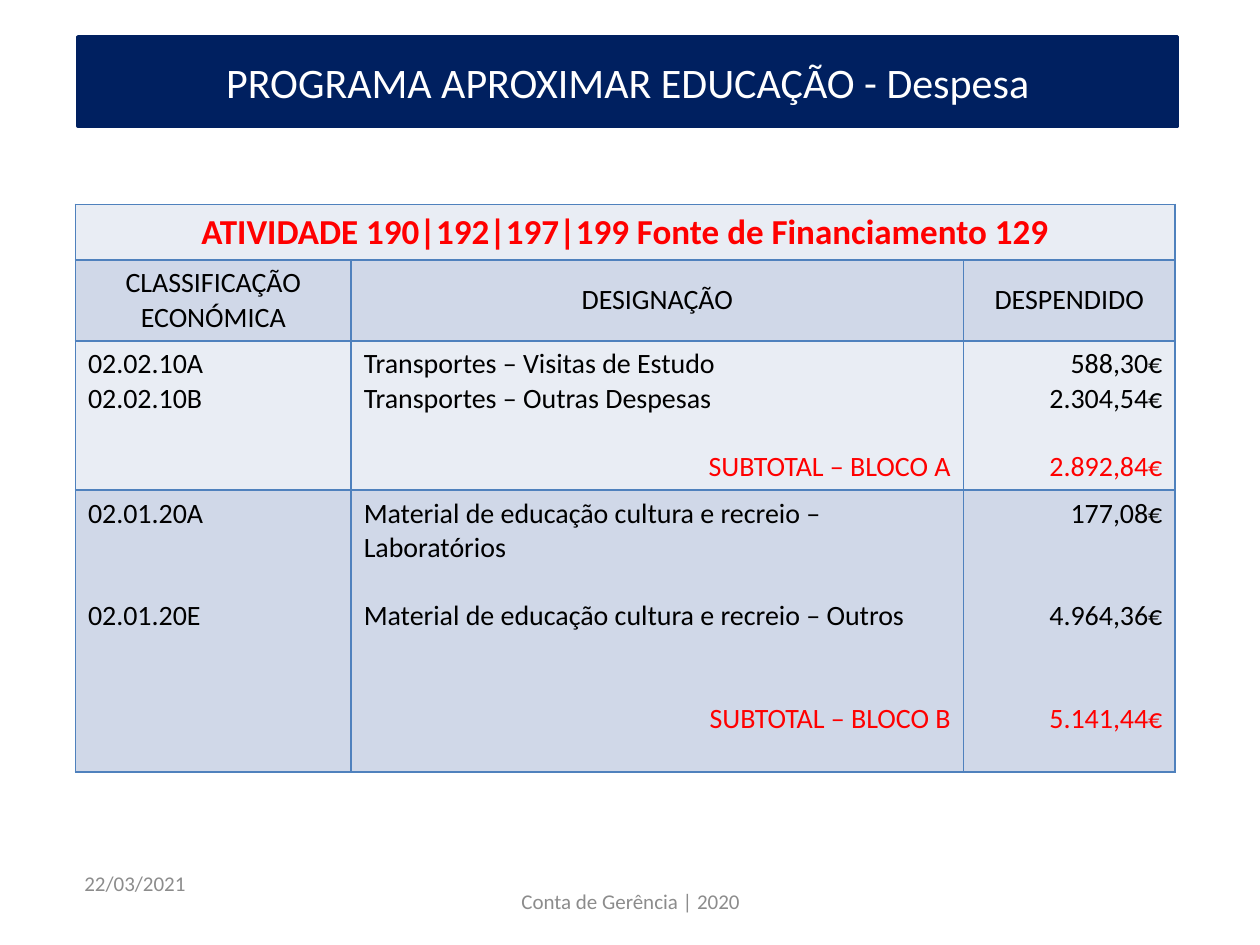
from dataclasses import dataclass

from lxml import etree
from pptx import Presentation
from pptx import util as u
from pptx.dml import color
from pptx.enum import text
from pptx.oxml import ns

Cm, Pt = u.Cm, u.Pt
RGB = color.RGBColor.from_string
A = text.PP_ALIGN


@dataclass(frozen=True)
class Theme:
    font: str = "Calibri"
    navy: str = "002060"
    white: str = "FFFFFF"
    black: str = "000000"
    red: str = "FF0000"
    grey: str = "8C8C8C"
    border: str = "4F81BD"
    light: str = "E9EDF4"
    dark: str = "D0D8E8"
    title: int = 24
    heading: int = 20
    body: int = 16
    footer: int = 12
    line: float = 19.53


t = Theme()


def write(p, words, size, ink, align, bold=False):
    p.text = words
    p.alignment = align
    for r in p.runs:
        r.font.name = t.font
        r.font.size = Pt(size)
        r.font.bold = bold
        r.font.color.rgb = RGB(ink)


def border(cell):
    pr = cell._tc.get_or_add_tcPr()
    for i, side in enumerate(("lnL", "lnR", "lnT", "lnB")):
        ln = etree.Element(ns.qn(f"a:{side}"), w=str(Pt(1)))
        fill = etree.SubElement(ln, ns.qn("a:solidFill"))
        etree.SubElement(fill, ns.qn("a:srgbClr"), val=t.border)
        pr.insert(i, ln)


prs = Presentation()
prs.slide_width, prs.slide_height = Cm(25.4), Cm(19.05)
s = prs.slides.add_slide(prs.slide_layouts.get_by_name("Title Only"))

sp = s.shapes.title
sp.left, sp.top, sp.width, sp.height = Cm(1.57), Cm(0.74), Cm(22.17), Cm(1.8)
geom = etree.SubElement(sp._element.spPr, ns.qn("a:prstGeom"), prst="roundRect")
etree.SubElement(geom, ns.qn("a:avLst"))
sp.fill.solid()
sp.fill.fore_color.rgb = RGB(t.navy)
sp.line.color.rgb = RGB(t.navy)
sp.line.width = Pt(2)
tf = sp.text_frame
tf.auto_size = text.MSO_AUTO_SIZE.NONE
tf.vertical_anchor = text.MSO_ANCHOR.MIDDLE
write(tf.paragraphs[0], "PROGRAMA APROXIMAR EDUCAÇÃO - Despesa", t.title, t.white, A.CENTER)

footers = [
    ("22/03/2021", 1.45, 17.3, 5.92, A.LEFT),
    ("Conta de Gerência | 2020", 8.69, 17.65, 8.05, A.CENTER),
]
for words, left, top, width, align in footers:
    tf = s.shapes.add_textbox(Cm(left), Cm(top), Cm(width), Cm(1.02)).text_frame
    tf.word_wrap = True
    tf.vertical_anchor = text.MSO_ANCHOR.MIDDLE
    write(tf.paragraphs[0], words, t.footer, t.grey, align)

styles = {
    "heading": (t.heading, t.red, A.CENTER, True),
    "header": (t.body, t.black, A.CENTER),
    "item": (t.body, t.black, A.LEFT),
    "value": (t.body, t.black, A.RIGHT),
    "subtotal": (t.body, t.red, A.RIGHT),
}
rows = [
    [[("ATIVIDADE 190|192|197|199 Fonte de Financiamento 129", "heading", 0)], [], []],
    [
        [("CLASSIFICAÇÃO", "header", 0), ("ECONÓMICA", "header", 0)],
        [("DESIGNAÇÃO", "header", 0)],
        [("DESPENDIDO", "header", 0)],
    ],
    [
        [("02.02.10A", "item", 0), ("02.02.10B", "item", 0)],
        [
            ("Transportes – Visitas de Estudo", "item", 0),
            ("Transportes – Outras Despesas", "item", 0),
            ("SUBTOTAL – BLOCO A", "subtotal", 1),
        ],
        [("588,30€", "value", 0), ("2.304,54€", "value", 0), ("2.892,84€", "subtotal", 1)],
    ],
    [
        [("02.01.20A", "item", 0), ("02.01.20E", "item", 2)],
        [
            ("Material de educação cultura e recreio – Laboratórios", "item", 0),
            ("Material de educação cultura e recreio – Outros", "item", 1),
            ("SUBTOTAL – BLOCO B", "subtotal", 2),
        ],
        [("177,08€", "value", 0), ("4.964,36€", "value", 2), ("5.141,44€", "subtotal", 2)],
    ],
]
widths = [5.56, 12.34, 4.27]
heights = [1.12, 1.63, 3.01, 5.68]

frame = s.shapes.add_table(
    len(rows), len(widths), Cm(1.52), Cm(4.12), Cm(sum(widths)), Cm(sum(heights))
)
table = frame.table
for column, width in zip(table.columns, widths):
    column.width = Cm(width)
for row, height in zip(table.rows, heights):
    row.height = Cm(height)
table.cell(0, 0).merge(table.cell(0, 2))

for i, row in enumerate(rows):
    for j, lines in enumerate(row):
        cell = table.cell(i, j)
        cell.fill.solid()
        cell.fill.fore_color.rgb = RGB(t.dark if i % 2 else t.light)
        cell.vertical_anchor = text.MSO_ANCHOR.MIDDLE if i < 2 else text.MSO_ANCHOR.TOP
        border(cell)
        tf = cell.text_frame
        for k, (words, style, gap) in enumerate(lines):
            p = tf.add_paragraph() if k else tf.paragraphs[0]
            write(p, words, *styles[style])
            p.space_before = Pt(gap * t.line)

prs.save("out.pptx")
